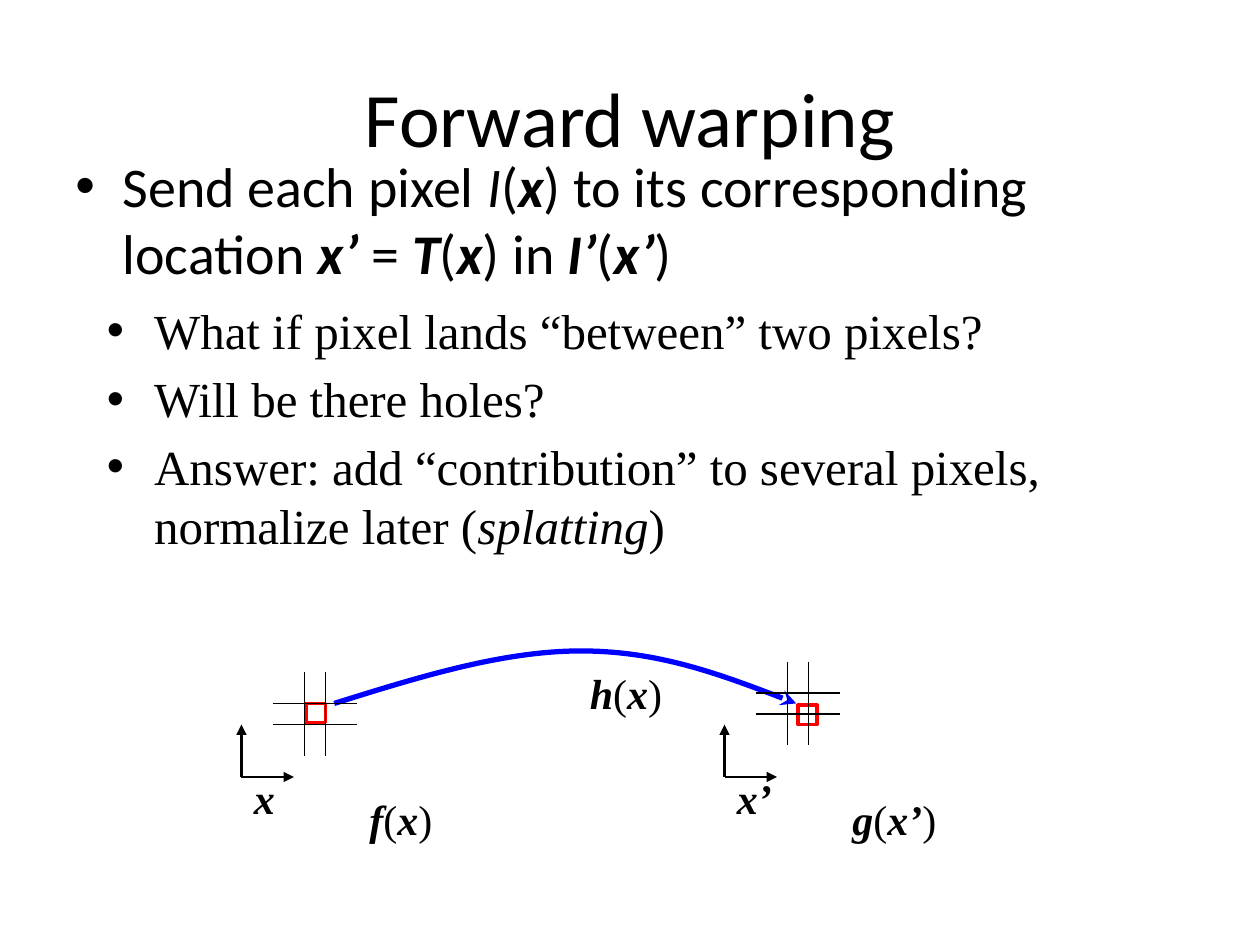
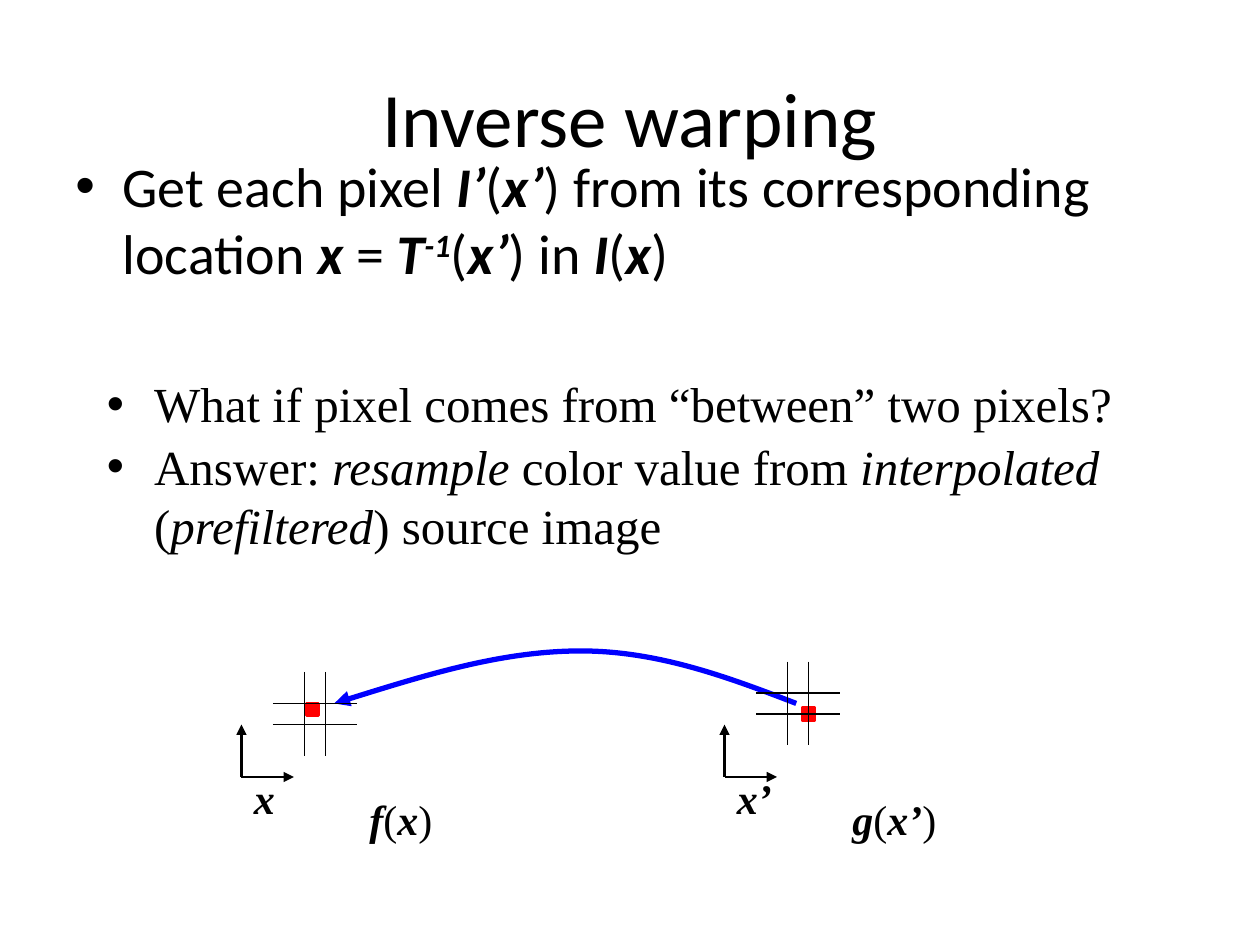
import dataclasses

import lxml.etree
import pptx
import pptx.dml.color
import pptx.enum.shapes
import pptx.enum.text
import pptx.oxml.ns
import pptx.util

Pt = pptx.util.Pt


@dataclasses.dataclass(frozen=True)
class Theme:
    """Hold the colours, fonts and sizes shared by the slides."""

    ink: str = "000000"
    pixel: str = "FF0000"
    mapping: str = "0000FF"
    heading_font: str = "Calibri"
    detail_font: str = "Times New Roman"
    title_size: int = 44
    body_size: int = 32
    detail_size: int = 28
    label_size: int = 24
    bullet_indent: int = 27
    grid_width: float = 0.75
    axis_width: float = 1.5
    pixel_width: int = 2
    mapping_width: int = 3


THEME = Theme()
MATH = "bold italic"
EMPHASIS = "italic"
POWER = "bold italic superscript"
SOURCE_GRID = (180, 408)
TARGET_GRID = (456, 402)
MAPPING_POINTS = [(191, 402), (239, 387), (287, 372), (332, 372),
                  (376, 372), (416, 387), (455, 402)]


def color(value):
    """Return a colour object for a hexadecimal value."""
    return pptx.dml.color.RGBColor.from_string(value)


def add_child(parent, tag, **attributes):
    """Append a drawing element with the given attributes."""
    return lxml.etree.SubElement(parent, pptx.oxml.ns.qn(tag), attributes)


def function_of(name, argument):
    """Return the text runs of a function applied to an argument."""
    return [(name, MATH), "(", (argument, MATH), ")"]


def fill_paragraph(paragraph, runs, font_name, size, spacing=0, bullet=False):
    """Write plain strings and (text, style) pairs into a paragraph."""
    properties = paragraph._p.get_or_add_pPr()
    if spacing:
        before = add_child(properties, "a:spcBef")
        add_child(before, "a:spcPct", val=str(spacing * 1000))
    if bullet:
        indent = Pt(THEME.bullet_indent)
        properties.set("marL", str(indent))
        properties.set("indent", str(-indent))
        add_child(properties, "a:buFont", typeface="Arial")
        add_child(properties, "a:buChar", char="•")
    font = paragraph.font
    font.name, font.size = font_name, Pt(size)
    font.color.rgb = color(THEME.ink)
    for item in runs:
        text, style = (item, "") if isinstance(item, str) else item
        run = paragraph.add_run()
        run.text = text
        if "bold" in style:
            run.font.bold = True
        if "italic" in style:
            run.font.italic = True
        if "superscript" in style:
            run.font._element.set("baseline", "30000")


def add_text_frame(slide, left, top, width, height):
    """Add a wrapping text box and return its frame."""
    frame = slide.shapes.add_textbox(Pt(left), Pt(top), Pt(width), Pt(height)).text_frame
    frame.word_wrap = True
    return frame


def add_title(slide, text):
    """Add the centred slide title."""
    frame = add_text_frame(slide, 36, 21.6, 648, 90)
    frame.vertical_anchor = pptx.enum.text.MSO_ANCHOR.MIDDLE
    paragraph = frame.paragraphs[0]
    paragraph.alignment = pptx.enum.text.PP_ALIGN.CENTER
    fill_paragraph(paragraph, [text], THEME.heading_font, THEME.title_size)


def add_statement(slide, runs):
    """Add the main bullet under the title."""
    frame = add_text_frame(slide, 36, 82.8, 648, 85)
    fill_paragraph(frame.paragraphs[0], runs, THEME.heading_font,
                   THEME.body_size, 20, True)


def add_details(slide, top, height, items, width=612):
    """Add second-level bullets, one for each list of runs."""
    frame = add_text_frame(slide, 54, top, width, height)
    for index, runs in enumerate(items):
        paragraph = frame.add_paragraph() if index else frame.paragraphs[0]
        fill_paragraph(paragraph, runs, THEME.detail_font,
                       THEME.detail_size, 20, True)


def add_label(slide, left, top, width, runs):
    """Add a mathematical label to the diagram."""
    frame = add_text_frame(slide, left, top, width, 36)
    frame.auto_size = pptx.enum.text.MSO_AUTO_SIZE.SHAPE_TO_FIT_TEXT
    fill_paragraph(frame.paragraphs[0], runs, THEME.detail_font,
                   THEME.label_size, 50)


def style_line(line, value, width):
    """Set the colour and width of a line."""
    line.color.rgb = color(value)
    line.width = Pt(width)


def add_arrowhead(line, end, kind):
    """Put an arrowhead on the head or tail end of a line."""
    add_child(line._get_or_add_ln(), f"a:{end}End", type=kind)


def add_line(shapes, start, end, width):
    """Add a straight black line without shadow."""
    connector = shapes.add_connector(
        pptx.enum.shapes.MSO_CONNECTOR.STRAIGHT, *map(Pt, start + end))
    style_line(connector.line, THEME.ink, width)
    add_child(connector._element.spPr, "a:effectLst")
    return connector


def add_axes(slide, x, y, length=30):
    """Add an upward and a rightward arrow from one corner."""
    shapes = slide.shapes.add_group_shape().shapes
    for end in ((x, y - length), (x + length, y)):
        axis = add_line(shapes, (x, y), end, THEME.axis_width)
        add_arrowhead(axis.line, "tail", "triangle")


def add_pixel_grid(slide, center, reach=24, half_gap=6):
    """Add two vertical and two horizontal lines around a centre."""
    shapes = slide.shapes.add_group_shape().shapes
    x, y = center
    for offset in (-half_gap, half_gap):
        add_line(shapes, (x + offset, y - reach), (x + offset, y + reach), THEME.grid_width)
        add_line(shapes, (x - reach, y + offset), (x + reach, y + offset), THEME.grid_width)


def add_pixel(slide, left, top, side, filled):
    """Add a red pixel square, solid or outlined."""
    square = slide.shapes.add_shape(
        pptx.enum.shapes.MSO_SHAPE.RECTANGLE, Pt(left), Pt(top), Pt(side), Pt(side))
    square.shadow.inherit = False
    if filled:
        square.fill.solid()
        square.fill.fore_color.rgb = color(THEME.pixel)
    else:
        square.fill.background()
    style_line(square.line, THEME.pixel, THEME.pixel_width)


def add_mapping_curve(slide, arrow_end, arrow_kind):
    """Add the curved arrow between the two pixel grids."""
    builder = slide.shapes.build_freeform(*MAPPING_POINTS[0], scale=Pt(1))
    builder.add_line_segments(MAPPING_POINTS[1:], close=False)
    curve = builder.convert_to_shape()
    curve.shadow.inherit = False
    curve.fill.background()
    style_line(curve.line, THEME.mapping, THEME.mapping_width)
    add_arrowhead(curve.line, arrow_end, arrow_kind)
    segments = list(curve._element.iter(pptx.oxml.ns.qn("a:lnTo")))
    outline = segments[0].getparent()
    for first in range(0, len(segments), 3):
        bezier = add_child(outline, "a:cubicBezTo")
        for segment in segments[first:first + 3]:
            bezier.append(segment[0])
            outline.remove(segment)


def add_diagram(slide, pixels, filled, arrow_end, arrow_kind):
    """Add the source and target pixels with the mapping between them."""
    for left, argument in ((138, "x"), (414, "x’")):
        add_axes(slide, left, 444)
        add_label(slide, left, 438, 54, [(argument, MATH)])
    add_label(slide, 204, 450, 54, function_of("f", "x"))
    add_label(slide, 480, 450, 66, function_of("g", "x’"))
    for left, top, side in pixels:
        add_pixel(slide, left, top, side, filled)
    add_mapping_curve(slide, arrow_end, arrow_kind)
    for center in (SOURCE_GRID, TARGET_GRID):
        add_pixel_grid(slide, center)


def add_forward_slide(presentation):
    """Build the slide on forward warping."""
    slide = presentation.slides.add_slide(presentation.slide_layouts[6])
    add_title(slide, "Forward warping")
    add_statement(slide, [
        "Send each pixel ", ("I", EMPHASIS), "(", ("x", MATH),
        ") to its corresponding location ", ("x’ ", MATH), "= ",
        *function_of("T", "x"), " in ", *function_of("I’", "x’")])
    add_details(slide, 168, 79, [["What if pixel lands “between” two pixels?"],
                                 ["Will be there holes?"]])
    add_details(slide, 246, 72, [[
        "Answer: add “contribution” to several pixels, normalize later (",
        ("splatting", EMPHASIS), ")"]])
    add_diagram(slide, [(175, 402, 11), (456, 403, 11)], False, "tail", "stealth")
    add_label(slide, 330, 378, 66, function_of("h", "x"))


def add_inverse_slide(presentation):
    """Build the slide on inverse warping."""
    slide = presentation.slides.add_slide(presentation.slide_layouts[6])
    add_title(slide, "Inverse warping")
    add_statement(slide, [
        "Get each pixel ", *function_of("I’", "x’"),
        " from its corresponding location ", ("x ", MATH), "= ",
        ("T", MATH), ("-1", POWER), "(", ("x’", MATH), ") in ",
        *function_of("I", "x")])
    add_details(slide, 210, 43, [["What if pixel comes from “between” two pixels?"]], 630)
    add_details(slide, 246, 72, [[
        "Answer: ", ("resample", EMPHASIS), " color value from ",
        ("interpolated", EMPHASIS), " (", ("prefiltered", EMPHASIS),
        ") source image"]])
    add_diagram(slide, [(175, 402, 7), (458.5, 404.5, 7)], True, "head", "triangle")


def main():
    """Create and save the presentation."""
    presentation = pptx.Presentation()
    presentation.slide_width, presentation.slide_height = Pt(720), Pt(540)
    add_forward_slide(presentation)
    add_inverse_slide(presentation)
    presentation.save("out.pptx")


if __name__ == "__main__":
    main()
